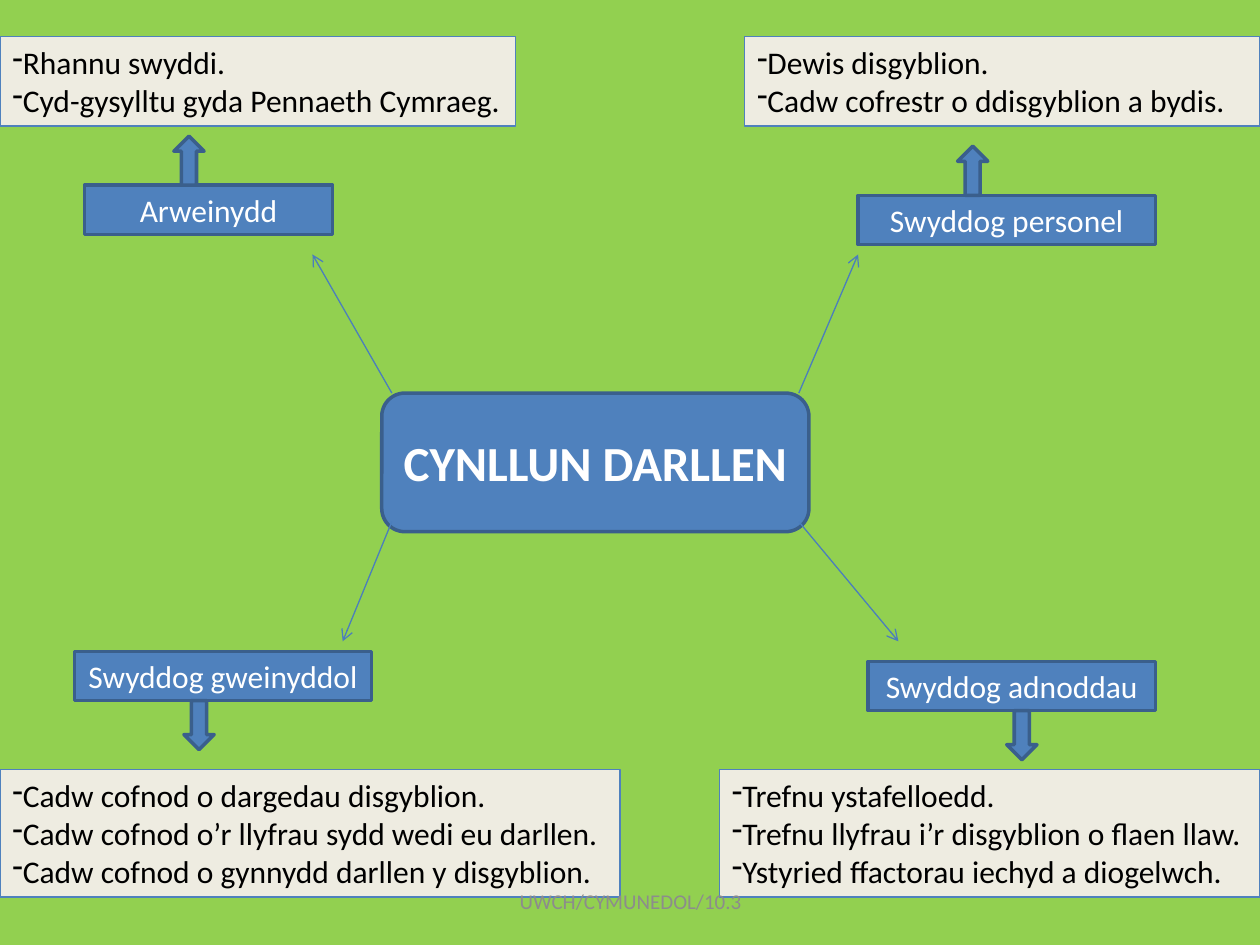
from lxml import etree
from pptx import Presentation
from pptx.dml.color import RGBColor
from pptx.enum.shapes import MSO_CONNECTOR, MSO_SHAPE
from pptx.enum.text import MSO_ANCHOR, MSO_AUTO_SIZE, PP_ALIGN
from pptx.oxml.ns import qn
from pptx.util import Inches, Pt

RECT, ROUNDED = MSO_SHAPE.RECTANGLE, MSO_SHAPE.ROUNDED_RECTANGLE
UP, DOWN = MSO_SHAPE.UP_ARROW, MSO_SHAPE.DOWN_ARROW
CENTER, MIDDLE = PP_ALIGN.CENTER, MSO_ANCHOR.MIDDLE
FIT_SHAPE = MSO_AUTO_SIZE.SHAPE_TO_FIT_TEXT

GREEN, BLUE, DARK_BLUE, LINE_BLUE = "92D050", "4F81BD", "3A5F8C", "4B7EBC"
CREAM, WHITE, BLACK, GREY = "EEECE1", "FFFFFF", "000000", "8C8C8C"

WIDTH, HEIGHT = 10, 7.5
ROLE_H = 0.39
ARROW_W = 0.24
NOTE_TOP, NOTE_BOTTOM = 0.29, 6.11
NOTE_HEIGHTS = {2: 0.71, 3: 1.01}

TITLE = "CYNLLUN DARLLEN"
TITLE_BOX = (3.03, 3.12, 3.39, 1.1)
FOOTER = "UWCH/CYMUNEDOL/10.3"
FOOTER_BOX = (3.42, 6.95, 3.17, 0.4)

# role: name, (left, top, width), arrow left, spoke (from, to), note width, duties
ROLES = [
    ("Arweinydd", (0.67, 1.47, 1.97), 1.38, ((3.11, 3.12), (2.48, 2.02)), 4.09,
     ["Rhannu swyddi.", "Cyd-gysylltu gyda Pennaeth Cymraeg."]),
    ("Swyddog personel", (6.81, 1.55, 2.36), 7.6, ((6.34, 3.12), (6.81, 2.02)), 4.09,
     ["Dewis disgyblion.", "Cadw cofrestr o ddisgyblion a bydis."]),
    ("Swyddog gweinyddol", (0.59, 5.17, 2.36), 1.46, ((3.11, 4.14), (2.72, 5.09)), 4.92,
     ["Cadw cofnod o dargedau disgyblion.",
      "Cadw cofnod o’r llyfrau sydd wedi eu darllen.",
      "Cadw cofnod o gynnydd darllen y disgyblion."]),
    ("Swyddog adnoddau", (6.89, 5.25, 2.28), 7.99, ((6.34, 4.14), (7.13, 5.09)), 4.29,
     ["Trefnu ystafelloedd.", "Trefnu llyfrau i’r disgyblion o flaen llaw.",
      "Ystyried ffactorau iechyd a diogelwch."]),
]


def rgb(color):
    return RGBColor.from_string(color)


def paint(sp, fill, line, weight):
    sp.fill.solid()
    sp.fill.fore_color.rgb = rgb(fill)
    sp.line.color.rgb = rgb(line)
    sp.line.width = Pt(weight)


def write(sp, lines, size, color, bold=False, align=None):
    tf = sp.text_frame
    tf.word_wrap = True
    tf.text = "\n".join(lines)
    for p in tf.paragraphs:
        p.alignment = align
        p.font.name = "Calibri"
        p.font.size = Pt(size)
        p.font.bold = bold
        p.font.color.rgb = rgb(color)


def add_block(s, kind, box, lines=(), size=18, bold=False):
    """Add a blue shape with centred white text."""
    sp = s.shapes.add_shape(kind, *map(Inches, box))
    sp.shadow.inherit = False
    paint(sp, BLUE, DARK_BLUE, 2)
    if lines:
        write(sp, lines, size, WHITE, bold, CENTER)
        sp.text_frame.vertical_anchor = MIDDLE


def add_spoke(s, start, end):
    line = s.shapes.add_connector(MSO_CONNECTOR.STRAIGHT, *map(Inches, start + end))
    line.line.color.rgb = rgb(LINE_BLUE)
    line.line.width = Pt(0.75)
    etree.SubElement(line.line._get_or_add_ln(), qn("a:tailEnd"), type="arrow")
    etree.SubElement(line._element.spPr, qn("a:effectLst"))


def add_note(s, box, duties):
    sp = s.shapes.add_textbox(*map(Inches, box))
    paint(sp, CREAM, BLUE, 0.75)
    write(sp, duties, 18, BLACK)
    sp.text_frame.auto_size = FIT_SHAPE
    for p in sp.text_frame.paragraphs:
        pPr = p._p.get_or_add_pPr()
        bullet = etree.Element(qn("a:buChar"), char="-")
        pPr.insert(0, bullet)
        bullet.addprevious(etree.Element(qn("a:buFontTx")))


def main():
    prs = Presentation()
    prs.slide_width, prs.slide_height = Inches(WIDTH), Inches(HEIGHT)
    s = prs.slides.add_slide(prs.slide_layouts[6])
    s.background.fill.solid()
    s.background.fill.fore_color.rgb = rgb(GREEN)

    add_block(s, ROUNDED, TITLE_BOX, [TITLE], 28, True)
    for name, (left, top, width), arrow_left, spoke, note_w, duties in ROLES:
        upper = top < HEIGHT / 2
        add_block(s, RECT, (left, top, width, ROLE_H), [name])
        add_spoke(s, *spoke)
        note_left = 0 if left < WIDTH / 2 else WIDTH - note_w
        note_top = NOTE_TOP if upper else NOTE_BOTTOM
        add_note(s, (note_left, note_top, note_w, NOTE_HEIGHTS[len(duties)]), duties)
        arrow_top = top - ROLE_H if upper else top + ROLE_H
        add_block(s, UP if upper else DOWN, (arrow_left, arrow_top, ARROW_W, ROLE_H))

    footer = s.shapes.add_textbox(*map(Inches, FOOTER_BOX))
    write(footer, [FOOTER], 12, GREY, align=CENTER)
    footer.text_frame.vertical_anchor = MIDDLE
    prs.save("out.pptx")


if __name__ == "__main__":
    main()
